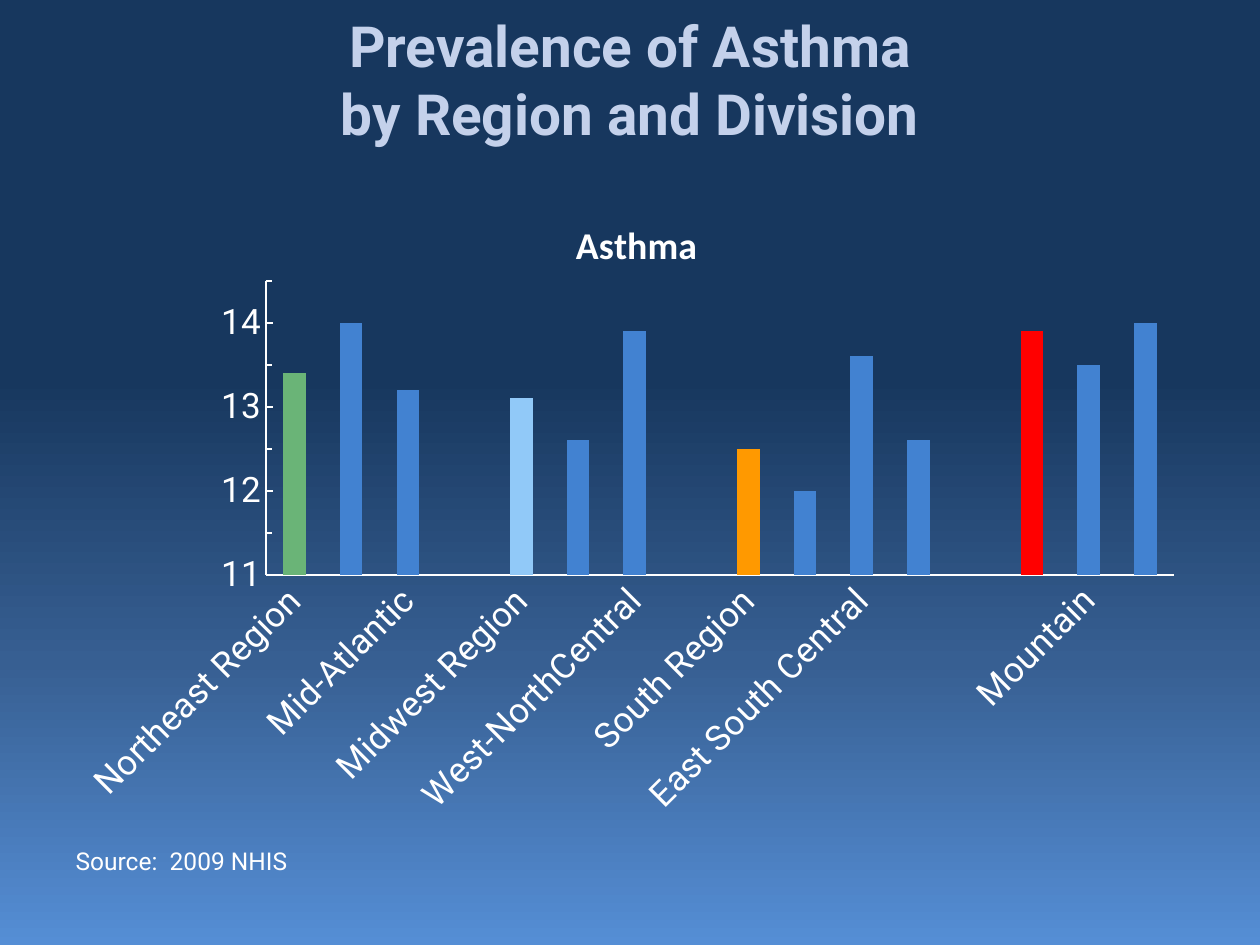
import pptx
import pptx.chart.data
import pptx.dml.color
import pptx.enum.chart
import pptx.enum.text
import pptx.oxml
import pptx.oxml.ns
import pptx.util

PX = 914400 / 126
RGB = pptx.dml.color.RGBColor
WHITE = RGB(0xFF, 0xFF, 0xFF)
TITLE_COLOR = RGB(0xC4, 0xD1, 0xEB)
BAR_COLOR = RGB(0x42, 0x82, 0xD1)
NAVY = RGB(0x17, 0x37, 0x5E)
STEEL = RGB(0x37, 0x5F, 0x92)
SKY = RGB(0x55, 0x8E, 0xD5)
REGION_COLORS = {
    "Northeast Region": RGB(0x6A, 0xB4, 0x77),
    "Midwest Region": RGB(0x91, 0xC9, 0xF8),
    "South Region": RGB(0xFF, 0x99, 0x00),
    "West": RGB(0xFF, 0x00, 0x00),
}
BACKGROUND_STOPS = [(0, NAVY), (40, NAVY), (70, STEEL), (100, SKY)]
PREVALENCE = [
    ("Northeast Region", 13.4), ("New England", 14), ("Mid-Atlantic", 13.2),
    ("", None),
    ("Midwest Region", 13.1), ("East-North Central", 12.6), ("West-NorthCentral", 13.9),
    ("", None),
    ("South Region", 12.5), ("South Atlantic", 12), ("East South Central", 13.6),
    ("West South Central", 12.6),
    ("", None),
    ("West", 13.9), ("Mountain", 13.5), ("Pacific", 14),
]
qn = pptx.oxml.ns.qn


def emu(box):
    return [round(length * PX) for length in box]


def place(shape, box):
    shape.left, shape.top, shape.width, shape.height = emu(box)


def style_font(font, name, size, color=WHITE, bold=False):
    font.name = name
    font.size = pptx.util.Pt(size)
    font.color.rgb = color
    font.bold = bold


def paint_background(slide):
    fill = slide.background.fill
    fill.gradient()
    fill.gradient_angle = 270
    stop_list = slide.element.find(".//" + qn("a:gsLst"))
    for stop in list(stop_list):
        stop_list.remove(stop)
    for percent, color in BACKGROUND_STOPS:
        stop_list.append(pptx.oxml.parse_xml(
            f'<a:gs {pptx.oxml.ns.nsdecls("a")} pos="{percent * 1000}">'
            f'<a:srgbClr val="{color}"/></a:gs>'))


def fill_title(shape, box):
    place(shape, box)
    frame = shape.text_frame
    frame.text = "Prevalence of Asthma\vby Region and Division"
    frame.auto_size = pptx.enum.text.MSO_AUTO_SIZE.NONE
    frame.vertical_anchor = pptx.enum.text.MSO_ANCHOR.MIDDLE
    paragraph = frame.paragraphs[0]
    paragraph.alignment = pptx.enum.text.PP_ALIGN.CENTER
    for run in paragraph.runs:
        style_font(run.font, "Roboto", 32.4, TITLE_COLOR, True)


def fill_source(shape, box):
    place(shape, box)
    frame = shape.text_frame
    frame.text = "Source:  2009 NHIS"
    frame.auto_size = pptx.enum.text.MSO_AUTO_SIZE.NONE
    paragraph = frame.paragraphs[0]
    properties = paragraph._p.get_or_add_pPr()
    properties.set("marL", str(round(48 * PX)))
    properties.set("indent", str(round(-48 * PX)))
    properties.append(pptx.oxml.parse_xml(f'<a:buNone {pptx.oxml.ns.nsdecls("a")}/>'))
    style_font(paragraph.runs[0].font, "Roboto", 14)


def set_layout(parent, index, chart_box, part_box, inner=False):
    for layout in parent.findall(qn("c:layout")):
        parent.remove(layout)
    left, top, width, height = part_box
    target = '<c:layoutTarget val="inner"/>' if inner else ""
    values = {"x": left / chart_box[2], "y": top / chart_box[3]}
    if inner:
        values.update(w=width / chart_box[2], h=height / chart_box[3])
    modes = '<c:xMode val="edge"/><c:yMode val="edge"/>'
    sizes = "".join(f'<c:{key} val="{value:.4f}"/>' for key, value in values.items())
    parent.insert(index, pptx.oxml.parse_xml(
        f'<c:layout {pptx.oxml.ns.nsdecls("c")}><c:manualLayout>'
        f'{target}{modes}{sizes}</c:manualLayout></c:layout>'))


def style_axis(axis, tick_mark):
    axis.has_major_gridlines = False
    axis.major_tick_mark = tick_mark
    axis.minor_tick_mark = tick_mark
    axis.format.line.color.rgb = WHITE
    axis.format.line.width = pptx.util.Pt(1.5)
    style_font(axis.tick_labels.font, "Roboto", 20)


def add_prevalence_chart(slide, box):
    data = pptx.chart.data.CategoryChartData()
    data.categories = [name for name, value in PREVALENCE]
    data.add_series("Series 1", [value for name, value in PREVALENCE])
    chart = slide.shapes.add_chart(
        pptx.enum.chart.XL_CHART_TYPE.COLUMN_CLUSTERED, *emu(box), data).chart
    style_font(chart.font, "Calibri", 18)
    chart.has_legend = False

    chart.has_title = True
    title_frame = chart.chart_title.text_frame
    title_frame.text = "Asthma"
    style_font(title_frame.paragraphs[0].runs[0].font, "Calibri", 21.6, WHITE, True)
    chart.chart_title.include_in_layout = False
    set_layout(chart.chart_title._element, 1, box, (506, 32, 120, 46))

    plot = chart.plots[0]
    plot.gap_width = 150
    plot.vary_by_categories = False
    series = plot.series[0]
    series.invert_if_negative = False
    series.format.fill.solid()
    series.format.fill.fore_color.rgb = BAR_COLOR
    for index, (name, value) in enumerate(PREVALENCE):
        if name in REGION_COLORS:
            fill = series.points[index].format.fill
            fill.solid()
            fill.fore_color.rgb = REGION_COLORS[name]

    tick_marks = pptx.enum.chart.XL_TICK_MARK
    style_axis(chart.category_axis, tick_marks.NONE)
    chart.category_axis._element.find(".//" + qn("a:bodyPr")).set("rot", "-2700000")
    value_axis = chart.value_axis
    style_axis(value_axis, tick_marks.INSIDE)
    value_axis.minimum_scale = 11
    value_axis.maximum_scale = 14.5
    value_axis.major_unit = 1
    value_axis.minor_unit = 0.5
    value_axis.tick_labels.number_format = "0"
    value_axis.tick_labels.number_format_is_linked = False
    plot_area = chart._chartSpace.find(".//" + qn("c:plotArea"))
    set_layout(plot_area, 0, box, (203, 102, 908, 294), inner=True)


def main():
    presentation = pptx.Presentation()
    presentation.slide_width, presentation.slide_height = emu((1260, 945))
    slide = presentation.slides.add_slide(presentation.slide_layouts[1])
    paint_background(slide)
    fill_title(slide.shapes.title, (63, 0, 1134, 158))
    fill_source(slide.placeholders[1], (63, 840, 1134, 32))
    add_prevalence_chart(slide, (63, 179, 1134, 651))
    presentation.save("out.pptx")


if __name__ == "__main__":
    main()
